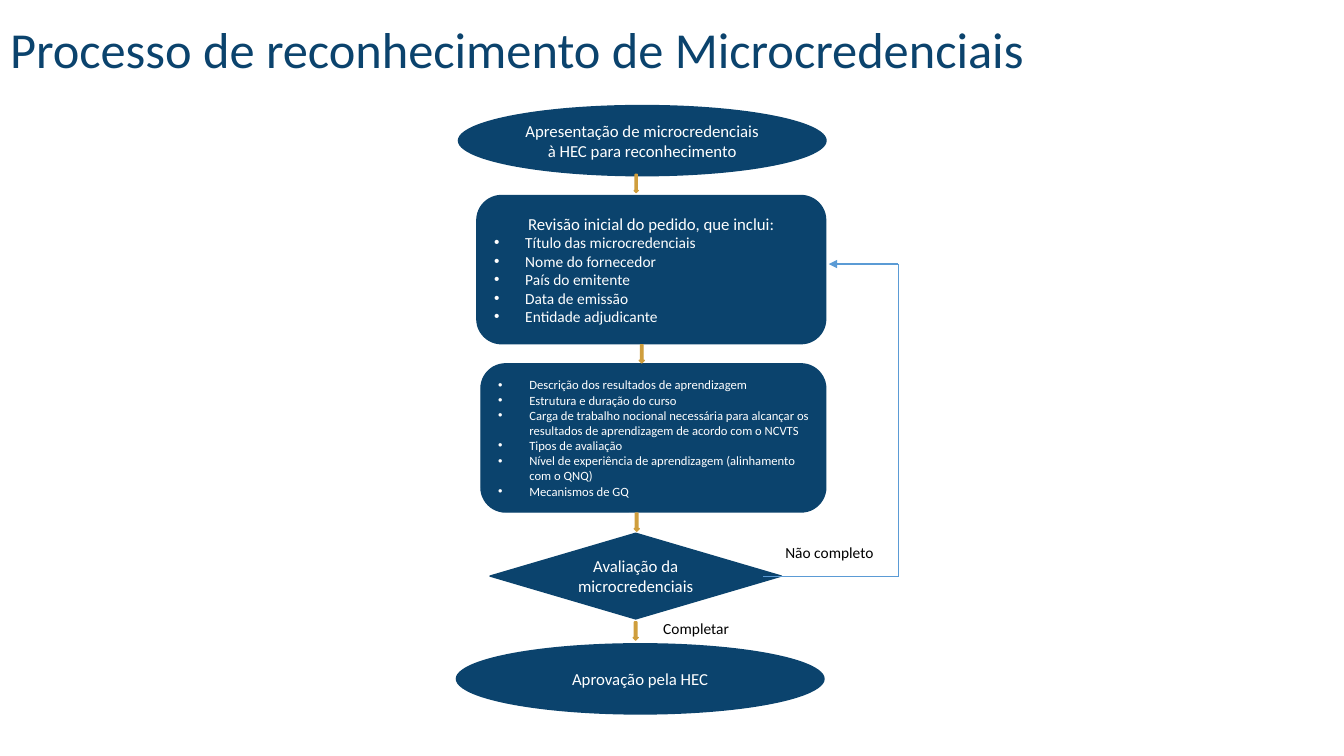
from lxml.etree import SubElement
from pptx import Presentation
from pptx.dml.color import RGBColor
from pptx.enum.shapes import MSO_CONNECTOR as Connector, MSO_SHAPE as Shape
from pptx.enum.text import MSO_ANCHOR as Anchor, MSO_AUTO_SIZE as AutoSize, PP_ALIGN as Align
from pptx.oxml.ns import qn
from pptx.util import Emu, Pt

EMU_PER_PX = 9144
NAVY, GOLD, BLUE, WHITE, BLACK = "0B436D", "CF9E3D", "5B9BD5", "FFFFFF", "000000"


def px(length):
    return Emu(length * EMU_PER_PX)


def paint(color_format, color):
    color_format.rgb = RGBColor.from_string(color)


class Flowchart:
    font = "Calibri"
    bullet_indent = 31

    def __init__(self, slide):
        self.slide = slide

    def add_text(self, paragraph, text, size, color, align=Align.LEFT):
        paragraph.alignment = align
        run = paragraph.add_run()
        run.text = text
        run.font.name = self.font
        run.font.size = Pt(size)
        paint(run.font.color, color)

    def title(self, text, box):
        title = self.slide.shapes.title
        title.left, title.top, title.width, title.height = map(px, box)
        frame = title.text_frame
        frame.auto_size = AutoSize.NONE
        frame.vertical_anchor = Anchor.MIDDLE
        frame.paragraphs[0].line_spacing = 0.9
        self.add_text(frame.paragraphs[0], text, 36, NAVY)

    def shape(self, kind, box, color=NAVY, outlined=True):
        shape = self.slide.shapes.add_shape(kind, *map(px, box))
        shape.shadow.inherit = False
        shape.fill.solid()
        paint(shape.fill.fore_color, color)
        if outlined:
            paint(shape.line.color, color)
            shape.line.width = Pt(1)
        else:
            shape.line.fill.background()
        return shape

    def step(self, kind, box, heading="", bullets=(), bullet_size=11, outlined=True):
        frame = self.shape(kind, box, outlined=outlined).text_frame
        frame.word_wrap = True
        frame.vertical_anchor = Anchor.MIDDLE
        paragraph = frame.paragraphs[0]
        if heading:
            self.add_text(paragraph, heading, 12, WHITE, Align.CENTER)
        for index, text in enumerate(bullets):
            if heading or index:
                paragraph = frame.add_paragraph()
            self.bullet(paragraph)
            self.add_text(paragraph, text, bullet_size, WHITE)

    def bullet(self, paragraph):
        properties = paragraph._p.get_or_add_pPr()
        properties.set("marL", str(px(self.bullet_indent)))
        properties.set("indent", str(-px(self.bullet_indent)))
        SubElement(properties, qn("a:buFont"), typeface="Arial")
        SubElement(properties, qn("a:buChar"), char="•")

    def down_arrow(self, left, top, width=5):
        self.shape(Shape.DOWN_ARROW, (left, top, width, 18), GOLD)

    def line(self, start, end, arrow=False):
        line = self.slide.shapes.add_connector(Connector.STRAIGHT, *map(px, start + end))
        paint(line.line.color, BLUE)
        line.line.width = Pt(1)
        if arrow:
            SubElement(line.line._get_or_add_ln(), qn("a:tailEnd"), type="triangle")
        SubElement(line._element.spPr, qn("a:effectLst"))

    def label(self, text, left, top):
        frame = self.slide.shapes.add_textbox(*map(px, (left, top, 130, 29))).text_frame
        frame.word_wrap = True
        frame.auto_size = AutoSize.SHAPE_TO_FIT_TEXT
        self.add_text(frame.paragraphs[0], text, 11, BLACK)


def main():
    presentation = Presentation()
    presentation.slide_width, presentation.slide_height = px(1333), px(750)
    chart = Flowchart(presentation.slides.add_slide(presentation.slide_layouts[5]))

    chart.title("Processo de reconhecimento de Microcredenciais", (0, 11, 1226, 81))
    chart.step(Shape.OVAL, (454, 104, 366, 71),
               "Apresentação de microcredenciais à HEC para reconhecimento", outlined=False)
    chart.down_arrow(629, 173, 4)
    chart.step(Shape.ROUNDED_RECTANGLE, (473, 194, 346, 147),
               "Revisão inicial do pedido, que inclui:",
               ["Título das microcredenciais",
                "Nome do fornecedor",
                "País do emitente",
                "Data de emissão",
                "Entidade adjudicante"])
    chart.step(Shape.ROUNDED_RECTANGLE, (477, 361, 342, 147),
               bullets=["Descrição dos resultados de aprendizagem",
                        "Estrutura e duração do curso",
                        "Carga de trabalho nocional necessária para alcançar os resultados "
                        "de aprendizagem de acordo com o NCVTS",
                        "Tipos de avaliação",
                        "Nível de experiência de aprendizagem (alinhamento com o QNQ)",
                        "Mecanismos de GQ"],
               bullet_size=9)
    chart.down_arrow(634, 342)
    chart.down_arrow(629, 509)
    chart.step(Shape.DIAMOND, (486, 529, 289, 85), "Avaliação da microcredenciais")
    chart.down_arrow(628, 617)
    chart.step(Shape.OVAL, (452, 638, 366, 71), "Aprovação pela HEC", outlined=False)

    return_top, return_bottom = (891, 262), (891, 572)
    chart.line(return_top, (822, 262), arrow=True)
    chart.line(return_top, return_bottom)
    chart.line((757, 572), return_bottom)
    chart.label("Não completo", 769, 534)
    chart.label("Completar", 648, 609)

    presentation.save("out.pptx")


if __name__ == "__main__":
    main()
